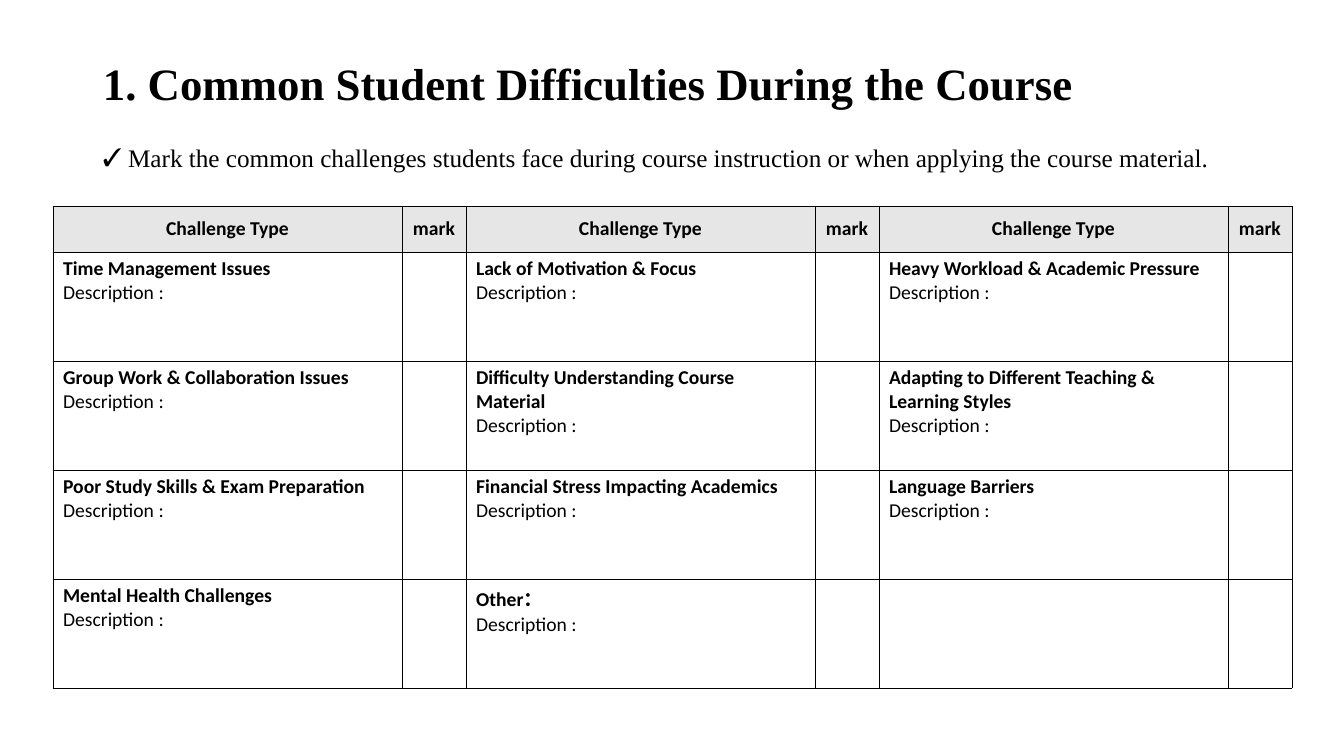
"""Build a slide with a checklist table of common student difficulties."""
from lxml.etree import SubElement
from pptx import Presentation
from pptx.dml.color import RGBColor
from pptx.enum.text import MSO_ANCHOR, PP_ALIGN
from pptx.oxml.ns import qn
from pptx.util import Emu, Pt

TITLE = "1. Common Student Difficulties During the Course"
INSTRUCTION = ("Mark the common challenges students face during course instruction "
               "or when applying the course material.")
HEADINGS = ["Challenge Type", "mark"]
DESCRIPTION = "Description :"
CHALLENGES = [
    ["Time Management Issues", "Lack of Motivation & Focus",
     "Heavy Workload & Academic Pressure"],
    ["Group Work & Collaboration Issues", "Difficulty Understanding Course Material",
     "Adapting to Different Teaching & Learning Styles"],
    ["Poor Study Skills & Exam Preparation", "Financial Stress Impacting Academics",
     "Language Barriers"],
    ["Mental Health Challenges", "Other："],
]
COLORS = {"ink": "000000", "header": "E7E6E6", "body": "FFFFFF"}
SERIF, SANS = "Times New Roman", "Calibri"
GROUPS = 3
COLUMN_WIDTHS = [349, 64] * GROUPS
ROW_HEIGHTS = [46] + [109] * len(CHALLENGES)


def px(length):
    return Emu(round(length * 914400 / 100.8))


def style(paragraph, font_name, size, bold=False):
    font = paragraph.font
    font.name, font.size, font.bold = font_name, Pt(size), bold
    font.color.rgb = RGBColor.from_string(COLORS["ink"])


def add_line(slide, box, text):
    frame = slide.shapes.add_textbox(*map(px, box)).text_frame
    frame.word_wrap = True
    paragraph = frame.paragraphs[0]
    paragraph.text = text
    return frame, paragraph


def add_check_bullet(paragraph):
    properties = paragraph._p.get_or_add_pPr()
    properties.set("marL", "228600")
    properties.set("indent", "-228600")
    SubElement(properties, qn("a:buFont"), typeface=SERIF)
    SubElement(properties, qn("a:buChar"), char="✓")


def outline(cell):
    properties = cell._tc.get_or_add_tcPr()
    for side in ("lnL", "lnR", "lnT", "lnB"):
        border = SubElement(properties, qn(f"a:{side}"), w=str(Pt(0.5)))
        fill = SubElement(border, qn("a:solidFill"))
        SubElement(fill, qn("a:srgbClr"), val=COLORS["ink"])


def fill_cell(cell, lines, is_header):
    outline(cell)
    cell.fill.solid()
    cell.fill.fore_color.rgb = RGBColor.from_string(COLORS["header" if is_header else "body"])
    cell.vertical_anchor = MSO_ANCHOR.MIDDLE if is_header else MSO_ANCHOR.TOP
    cell.text = "\n".join(lines)
    for index, paragraph in enumerate(cell.text_frame.paragraphs):
        paragraph.alignment = PP_ALIGN.CENTER if is_header else PP_ALIGN.LEFT
        style(paragraph, SANS, 14, bold=index == 0)


def add_checklist(slide):
    table = slide.shapes.add_table(
        len(ROW_HEIGHTS), len(COLUMN_WIDTHS), px(53), px(206),
        px(sum(COLUMN_WIDTHS)), px(sum(ROW_HEIGHTS))).table
    for column, width in zip(table.columns, COLUMN_WIDTHS):
        column.width = px(width)
    for row, height in zip(table.rows, ROW_HEIGHTS):
        row.height = px(height)
    contents = [[[heading] for heading in HEADINGS * GROUPS]]
    for challenges in CHALLENGES:
        cells = [[] for _ in COLUMN_WIDTHS]
        cells[:2 * len(challenges):2] = [[name, DESCRIPTION] for name in challenges]
        contents.append(cells)
    for row_index, cells in enumerate(contents):
        for column_index, lines in enumerate(cells):
            fill_cell(table.cell(row_index, column_index), lines, row_index == 0)


def main():
    presentation = Presentation()
    presentation.slide_width, presentation.slide_height = px(1344), px(756)
    slide = presentation.slides.add_slide(presentation.slide_layouts[6])

    title_frame, title = add_line(slide, (93, 50, 1159, 65), TITLE)
    title_frame.vertical_anchor = MSO_ANCHOR.MIDDLE
    style(title, SERIF, 32, bold=True)

    _, instruction = add_line(slide, (93, 133, 1159, 50), INSTRUCTION)
    instruction.line_spacing = 1.15
    add_check_bullet(instruction)
    style(instruction, SERIF, 18)

    add_checklist(slide)
    presentation.save("out.pptx")


if __name__ == "__main__":
    main()
